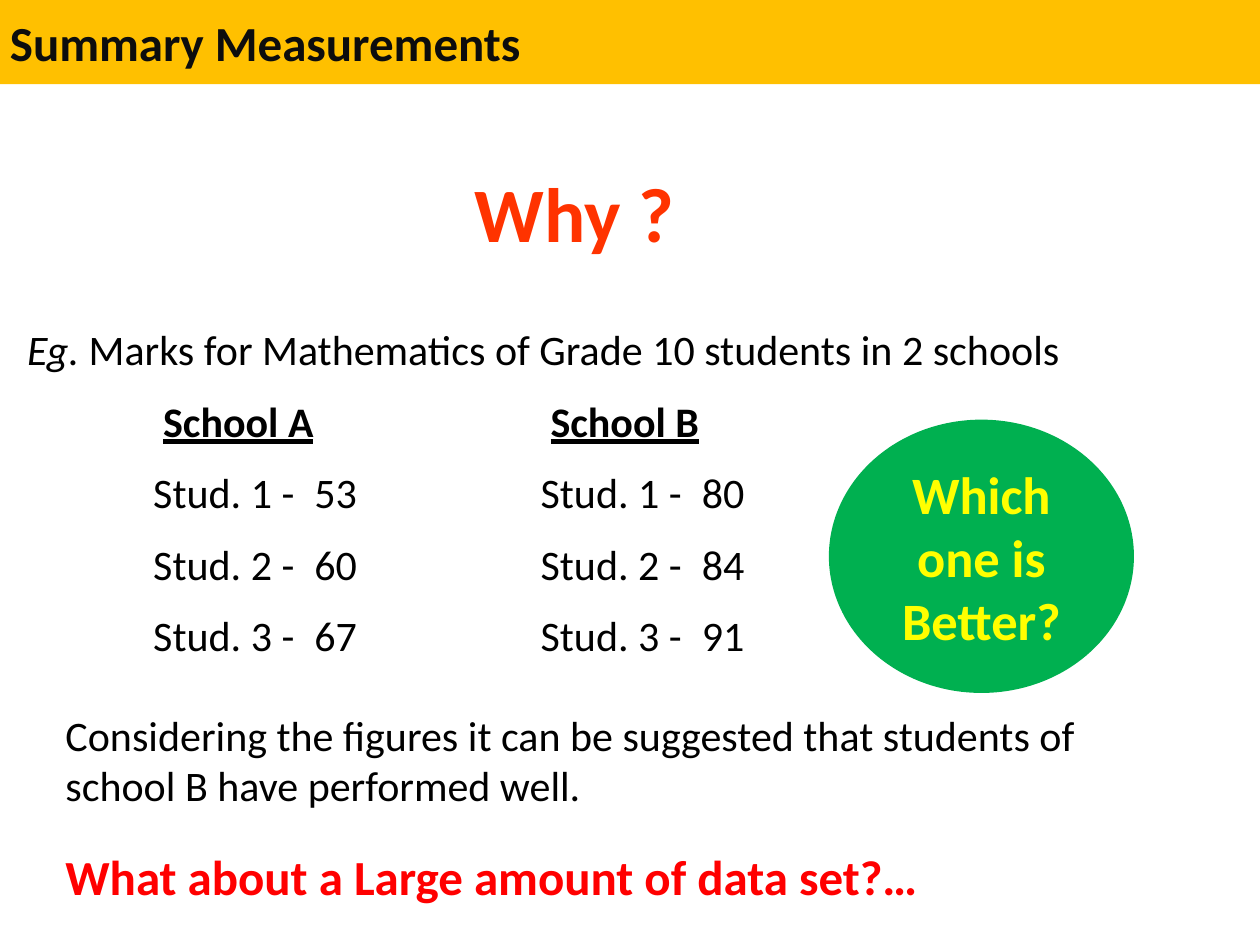
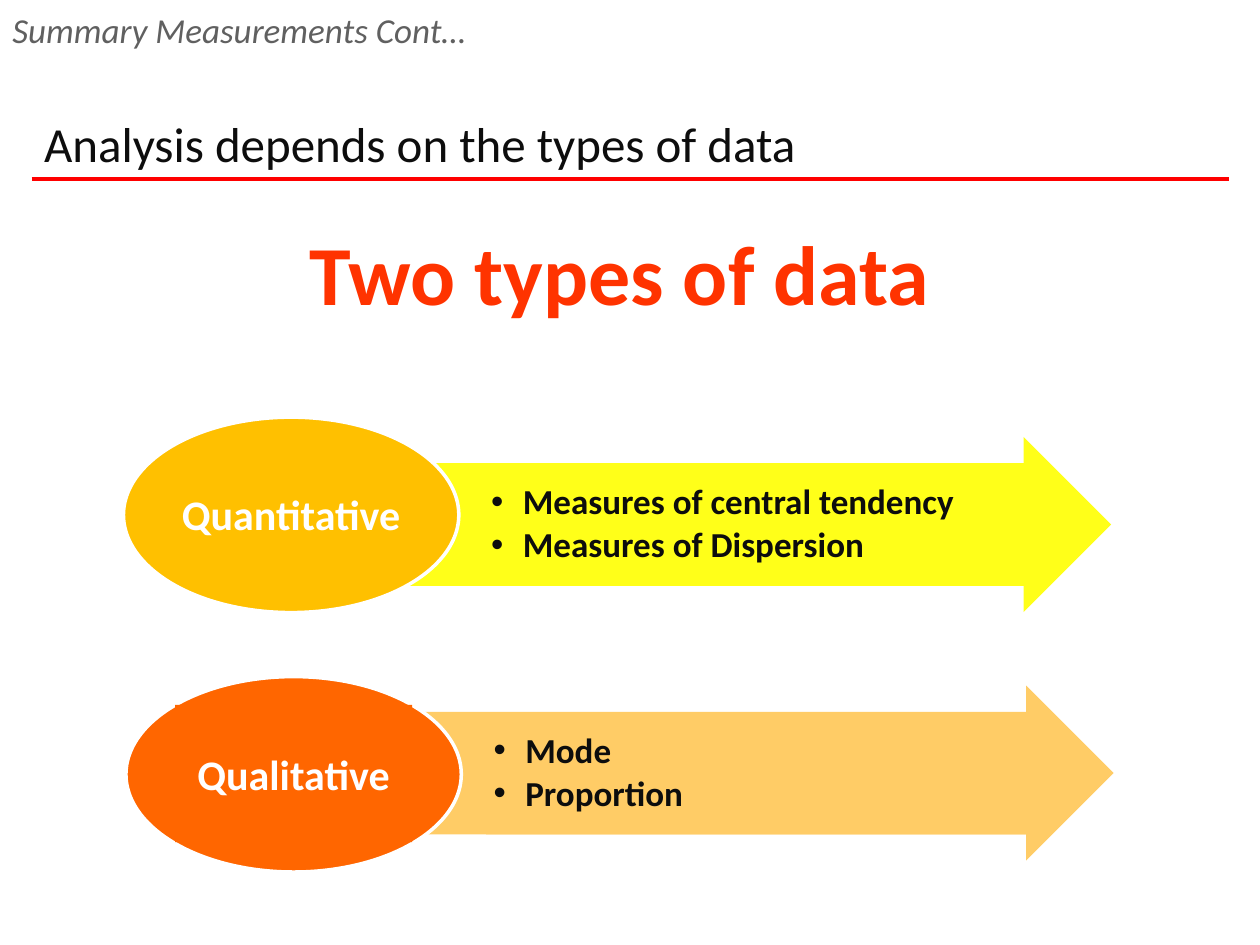
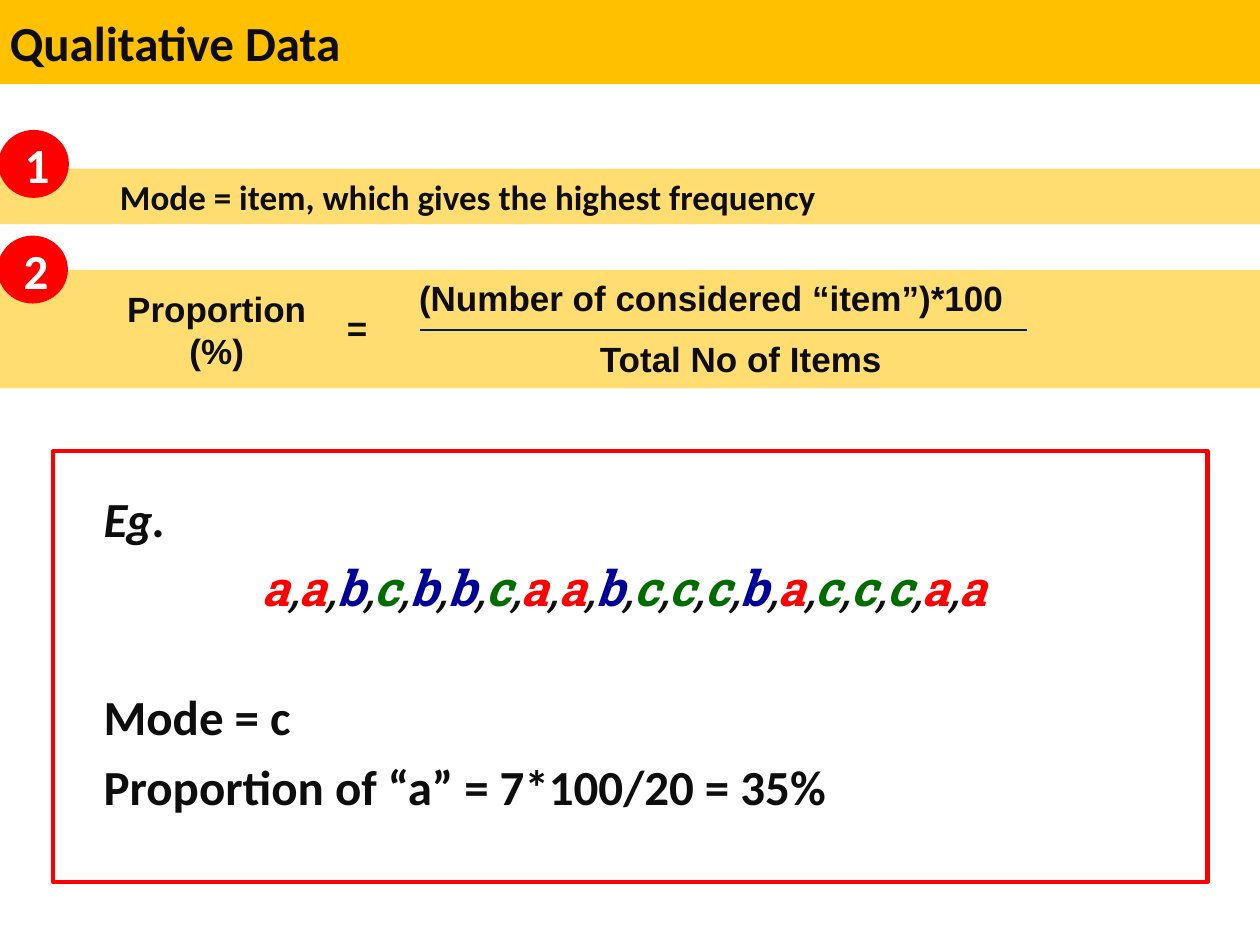
from lxml import etree
from pptx import Presentation
from pptx import util as u
from pptx.dml.color import RGBColor
from pptx.enum import shapes, text
from pptx.oxml.ns import qn

COLORS = {
    "band": "FFC000", "pale_band": "FFDD71", "ink": "0D0D0D", "black": "000000",
    "white": "FFFFFF", "red": "FF0000", "headline": "FF3300", "green": "00B050",
    "yellow": "FFFF00", "orange": "FF6600", "peach": "FFCC66", "grey": "606060",
    "navy": "002060", "letter_b": "000099", "letter_c": "006C00",
}
LETTER_COLORS = {"a": "red", "b": "letter_b", "c": "letter_c"}
INSETS = (0.25, 0.13, 0.25, 0.13)
CENTER = text.PP_ALIGN.CENTER
MIDDLE = text.MSO_ANCHOR.MIDDLE
OVAL = shapes.MSO_SHAPE.OVAL
RECTANGLE = shapes.MSO_SHAPE.RECTANGLE


def rgb(name):
    return RGBColor.from_string(COLORS[name])


def cm(*lengths):
    return [u.Cm(length) for length in lengths]


def set_font(font, color=None, **settings):
    if color:
        font.color.rgb = rgb(color)
    for name, value in settings.items():
        setattr(font, name, value)


def set_frame(shape, insets=INSETS, anchor=text.MSO_ANCHOR.TOP, wrap=True):
    frame = shape.text_frame
    frame.word_wrap = wrap
    frame.vertical_anchor = anchor
    (frame.margin_left, frame.margin_top,
     frame.margin_right, frame.margin_bottom) = cm(*insets)


def add_text_box(slide, box, **frame):
    area = slide.shapes.add_textbox(*cm(*box))
    set_frame(area, **frame)
    return area


def add_filled(slide, kind, box, fill, line=None, line_width=0, **frame):
    shape = slide.shapes.add_shape(kind, *cm(*box))
    shape.shadow.inherit = False
    shape.fill.solid()
    shape.fill.fore_color.rgb = rgb(fill)
    if line:
        shape.line.color.rgb = rgb(line)
        shape.line.width = u.Pt(line_width)
    else:
        shape.line.fill.background()
    set_frame(shape, **frame)
    return shape


def write(shape, content, size, color, before=0, after=0, align=text.PP_ALIGN.LEFT,
          spacing=None, indent=0, bullet=False, tabs=(), name="Calibri", **style):
    """Add a paragraph; content is a string or (string, font overrides) pairs."""
    frame = shape.text_frame
    first = frame.paragraphs[0]
    paragraph = frame.add_paragraph() if first.runs else first
    paragraph.alignment = align
    paragraph.space_before, paragraph.space_after = u.Pt(before), u.Pt(after)
    if spacing:
        paragraph.line_spacing = spacing
    properties = paragraph._p.get_or_add_pPr()
    if indent:
        properties.set("marL", str(u.Cm(indent)))
    if bullet:
        properties.set("indent", str(-u.Cm(indent)))
        etree.SubElement(properties, qn("a:buFont"), typeface="Arial")
        etree.SubElement(properties, qn("a:buChar"), char="•")
    if tabs:
        tab_list = etree.SubElement(properties, qn("a:tabLst"))
        for position in tabs:
            etree.SubElement(tab_list, qn("a:tab"), pos=str(u.Cm(position)), algn="l")
    set_font(paragraph.font, color, size=u.Pt(size), name=name, **style)
    for words, overrides in [(content, {})] if isinstance(content, str) else content:
        run = paragraph.add_run()
        run.text = words
        if overrides:
            set_font(run.font, **overrides)


def add_rule(slide, left, right, y, color, width):
    rule = slide.shapes.add_connector(
        shapes.MSO_CONNECTOR.STRAIGHT, *cm(left, y, right, y))
    rule.line.color.rgb = rgb(color)
    rule.line.width = u.Pt(width)
    etree.SubElement(rule._element.spPr, qn("a:effectLst"))


def add_title_band(slide, title):
    band = add_filled(slide, RECTANGLE, (-0.05, 0, 25.45, 1.7), "band", insets=[0.25] * 4)
    write(band, title, 28, "ink", bold=True)


def add_badge(slide, left, top, number):
    badge = add_filled(slide, OVAL, (left, top, 1.42, 1.37), "red",
                       insets=(0.13, 0, 0, 0), anchor=MIDDLE)
    write(badge, number, 28, "white", align=CENTER, bold=True)


def add_data_type(slide, left, oval_top, arrow_top, label, measures,
                  oval_fill, arrow_fill, opacity=100, backed=False):
    """Oval naming a data type, with an arrow listing its measures.

    A backed pair has its texts on plates filled like the shapes below.
    """
    def add_area(box, fill, **frame):
        if backed:
            return add_filled(slide, RECTANGLE, box, fill, anchor=MIDDLE, **frame)
        return add_text_box(slide, box, anchor=MIDDLE, **frame)

    arrow = add_filled(slide, shapes.MSO_SHAPE.RIGHT_ARROW,
                       (left + 3.07, arrow_top, 16.84, 3.53), arrow_fill)
    arrow.adjustments[0], arrow.adjustments[1] = 0.7, 0.5
    if opacity < 100:
        color = arrow._element.spPr.find(qn("a:solidFill"))[0]
        etree.SubElement(color, qn("a:alpha"), val=str(opacity * 1000))
    measure_list = add_area((left + 7.26, arrow_top + 0.54, 11.38, 2.46), arrow_fill,
                            insets=(0.15, 0.03, 0.08, 0.03))
    for measure in measures:
        write(measure_list, measure, 20, "ink", after=3, spacing=0.9,
              indent=0.64, bullet=True, bold=True)
    add_filled(slide, OVAL, (left, oval_top, 6.76, 3.94), oval_fill, "white", 2)
    caption = add_area((left + 0.99, oval_top + 0.57, 4.78, 2.77), oval_fill, insets=[0] * 4)
    write(caption, label, 24, "white", align=CENTER, bold=True)


def build_why(slide):
    add_title_band(slide, "Summary Measurements")
    why = add_text_box(slide, (9.32, 3.2, 5.28, 2.13))
    write(why, "Why ?", 44, "headline", bold=True)

    marks = add_text_box(slide, (0.3, 6.4, 24.56, 7.09))
    write(marks, [("Eg.", {"italic": True}),
                  (" Marks for Mathematics of Grade 10 students in 2 schools", {})],
          24, "black")
    heading = {"bold": True, "underline": True}
    write(marks, [("\t", {}), ("School A", heading), ("\t", {}), ("School B", heading)],
          24, "black", before=12, tabs=(2.74, 10.55))
    for student, (mark_a, mark_b) in enumerate([(53, 80), (60, 84), (67, 91)], 1):
        write(marks, f"\tStud. {student} -\t{mark_a}\tStud. {student} -\t{mark_b}",
              24, "black", before=12, tabs=(2.54, 5.79, 10.35, 13.6))

    finding = add_text_box(slide, (1.07, 14.17, 22.86, 2.31))
    write(finding, "Considering the figures it can be suggested that students of "
          "school B have performed well.", 24, "black")
    follow_up = add_text_box(slide, (1.07, 16.94, 23.06, 1.45))
    write(follow_up, "What about a Large amount of data set?…", 28, "red", bold=True)

    question = add_filled(slide, OVAL, (16.71, 8.46, 6.15, 5.51), "green",
                          anchor=MIDDLE, wrap=False)
    for line in ("Which", "one is", "Better?"):
        write(question, line, 30, "yellow", align=CENTER, bold=True)


def build_data_types(slide):
    heading = add_text_box(slide, (0.64, 2.16, 23.7, 4.52))
    write(heading, "Analysis depends on the types of data", 28, "ink")
    write(heading, "Two types of data", 48, "headline", before=28, align=CENTER, bold=True)
    add_data_type(slide, 2.49, 8.41, 8.81, "Quantitative",
                  ["Measures of central tendency", "Measures of Dispersion"],
                  "band", "yellow", opacity=90)
    add_data_type(slide, 2.54, 13.64, 13.82, "Qualitative", ["Mode", "Proportion"],
                  "orange", "peach", backed=True)
    add_rule(slide, 0.64, 24.77, 3.61, "red", 2.25)
    running_title = add_text_box(slide, (0, 0.05, 22.86, 1.12))
    write(running_title, "Summary Measurements Cont…", 20, "grey", italic=True)


def build_qualitative(slide):
    add_title_band(slide, "Qualitative Data")
    mode = add_filled(slide, RECTANGLE, (0, 3.4, 25.4, 1.12), "pale_band",
                      insets=(2.42, 0.13, 0.25, 0.13))
    write(mode, "Mode = item, which gives the highest frequency", 20, "ink", bold=True)
    add_badge(slide, -0.03, 2.62, "1")

    formula = {"size": 20, "color": "ink", "align": CENTER, "name": "Arial", "bold": True}
    fraction = add_filled(slide, RECTANGLE, (0, 5.44, 25.4, 2.39), "pale_band")
    write(fraction, "(Number of considered “item”)*100", indent=3.28, **formula)
    write(fraction, "Total No of Items", before=11, indent=4.47, **formula)
    proportion = add_filled(slide, RECTANGLE, (2.16, 5.66, 4.42, 1.96), "pale_band")
    write(proportion, "Proportion (%)", **formula)
    add_rule(slide, 8.46, 20.7, 6.65, "navy", 1.5)
    equals = add_text_box(slide, (6.35, 6.05, 1.7, 1.12))
    write(equals, "=", **formula)
    add_badge(slide, -0.05, 4.75, "2")

    example = add_filled(slide, RECTANGLE, (1.07, 9.09, 23.27, 8.69), "white", "red", 2.5,
                         insets=(1.02, 0.76, 1.27, 1.02))
    write(example, "Eg.", 28, "ink", bold=True, italic=True)
    sequence = [(mark, {"color": LETTER_COLORS[mark], "bold": True} if mark != "," else {})
                for mark in ",".join("aabcbbcaabcccbacccaa")]
    write(example, sequence, 28, "ink", before=6, align=CENTER,
          name="Roboto Slab", italic=True)
    write(example, "Mode = c", 28, "ink", before=40, bold=True)
    write(example, "Proportion of “a” = 7*100/20 = 35%", 28, "ink", before=6, bold=True)


def main():
    deck = Presentation()
    deck.slide_width, deck.slide_height = cm(25.4, 19.05)
    for build in (build_why, build_data_types, build_qualitative):
        build(deck.slides.add_slide(deck.slide_layouts[6]))
    deck.save("out.pptx")


if __name__ == "__main__":
    main()
